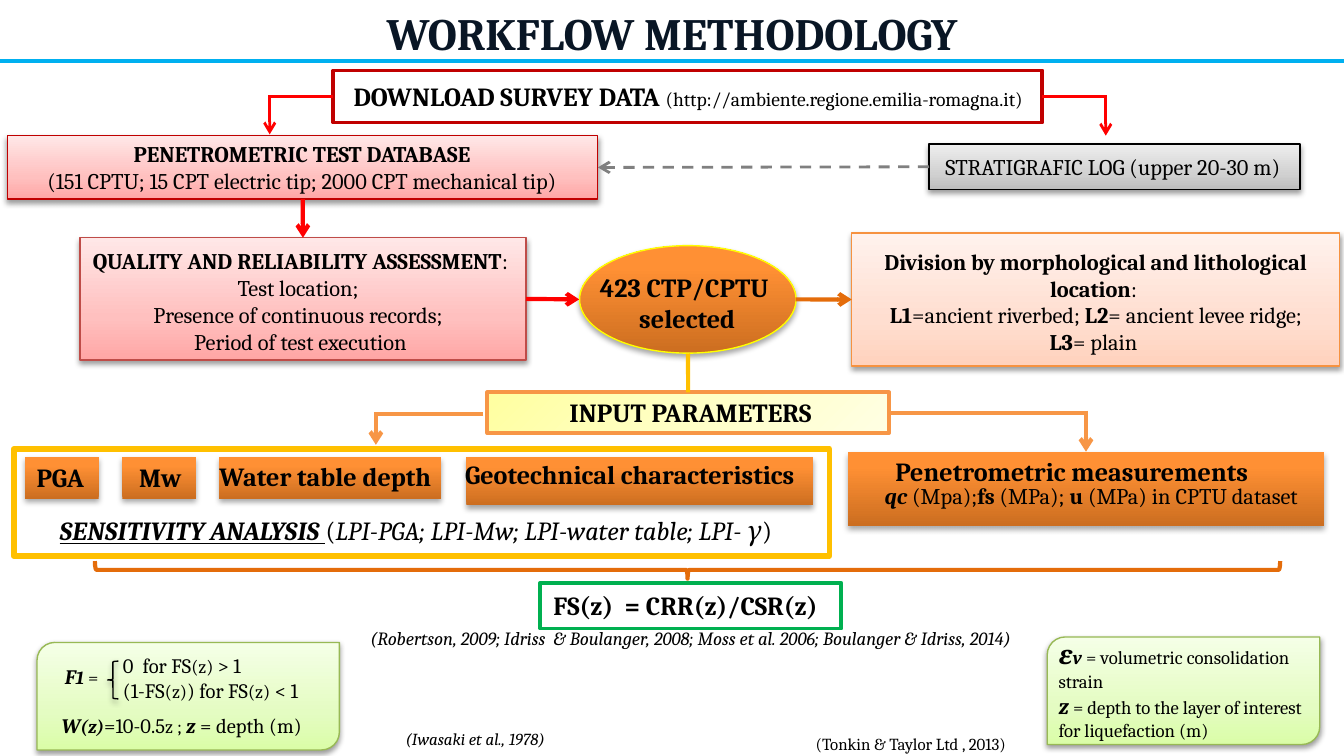
from copy import deepcopy
from dataclasses import dataclass

from lxml.etree import SubElement
from pptx import Presentation
from pptx.dml.color import RGBColor
from pptx.enum.dml import MSO_LINE
from pptx.enum.shapes import MSO_CONNECTOR, MSO_SHAPE
from pptx.enum.text import MSO_ANCHOR, MSO_AUTO_SIZE, PP_ALIGN
from pptx.oxml.ns import qn
from pptx.util import Pt

FONT = "Cambria"
TOP, LEFT, BOTTOM, RIGHT = range(4)
RED, AMBER, ORANGE, DARK_ORANGE = "FF0000", "FFC000", "F79646", "E46C0A"
GREEN_FADE = ((0, "DAFDA7"), (35, "E4FCC2"), (100, "F5FFE7"))
PINK_FADE = ((0, "FFA6A5"), (35, "FFC0BF"), (100, "FFE7E7"))
ORANGE_FADE = ((0, "CC6E20"), (80, "FF9034"), (100, "FF9136"))
PEACH_FADE = ((0, "FFD2BD"), (35, "FFDED0"), (100, "FFF2ED"))
GREY_FADE = ((0, "BDBDBD"), (35, "D1D1D1"), (100, "EEEEEE"))
YELLOW_FADE = ((0, "FFFFA0"), (50, "FFFFC5"), (100, "FFFFE3"))
SOFT, STRONG = (38, 1.6), (35, 1.8)


@dataclass
class Box:
    at: tuple
    fade: tuple = ()
    line: str = ""
    width: float = 0.75
    shadow: tuple = ()
    kind: MSO_SHAPE = MSO_SHAPE.RECTANGLE
    angle: int = 90
    rotation: int = 0


@dataclass
class Line:
    start: tuple
    end: tuple
    color: str
    width: float = 2.25
    arrow: bool = True
    begin: tuple = ()
    finish: tuple = ()
    dashed: bool = False


@dataclass
class Label:
    at: tuple
    size: float
    paras: list
    align: PP_ALIGN = PP_ALIGN.CENTER
    wrap: bool = True
    color: str = "000000"
    insets: tuple = (3.6, 3.6)


def rgb(value: str) -> RGBColor:
    return RGBColor.from_string(value)


def apply(target, values: dict) -> None:
    for key, value in values.items():
        setattr(target, key, value)


def draw_box(slide, box: Box):
    sp = slide.shapes.add_shape(box.kind, *map(Pt, box.at))
    sp.rotation = box.rotation
    if box.fade:
        sp.fill.gradient()
        sp.fill.gradient_angle = box.angle
        stops = sp._element.spPr.find(qn("a:gradFill")).find(qn("a:gsLst"))
        stops.append(deepcopy(stops[0]))
        for stop, (pos, color) in zip(sp.fill.gradient_stops, box.fade):
            stop.position = pos / 100
            stop.color.rgb = rgb(color)
    else:
        sp.fill.background()
    if box.line:
        sp.line.color.rgb = rgb(box.line)
        sp.line.width = Pt(box.width)
    else:
        sp.line.fill.background()
    sp.shadow.inherit = False
    if box.shadow:
        alpha, dist = box.shadow
        effects = sp._element.spPr.find(qn("a:effectLst"))
        outer = SubElement(effects, qn("a:outerShdw"), blurRad=str(Pt(3.1)), dist=str(Pt(dist)),
                           dir="5400000", rotWithShape="0")
        color = SubElement(outer, qn("a:srgbClr"), val="000000")
        SubElement(color, qn("a:alpha"), val=str(alpha * 1000))
    return sp


def draw_line(slide, line: Line, shapes: dict) -> None:
    c = slide.shapes.add_connector(MSO_CONNECTOR.STRAIGHT, *map(Pt, line.start + line.end))
    for join, target in ((c.begin_connect, line.begin), (c.end_connect, line.finish)):
        if target:
            join(shapes[target[0]], target[1])
    c.line.color.rgb = rgb(line.color)
    c.line.width = Pt(line.width)
    if line.dashed:
        c.line.dash_style = MSO_LINE.DASH
    if line.arrow:
        SubElement(c.line._get_or_add_ln(), qn("a:tailEnd"), type="arrow")
    SubElement(c._element.spPr, qn("a:effectLst"))


def write_label(sp, label: Label) -> None:
    apply(sp, dict(zip(("left", "top", "width", "height"), map(Pt, label.at))))
    tf = sp.text_frame
    above, below = map(Pt, label.insets)
    apply(tf, {"word_wrap": label.wrap, "auto_size": MSO_AUTO_SIZE.SHAPE_TO_FIT_TEXT,
               "vertical_anchor": MSO_ANCHOR.TOP, "margin_top": above, "margin_bottom": below})
    for i, runs in enumerate(label.paras):
        p = tf.add_paragraph() if i else tf.paragraphs[0]
        apply(p, {"alignment": label.align, "space_before": Pt(0)})
        for text, style, *size in runs:
            r = p.add_run()
            r.text = text
            apply(r.font, {"name": FONT, "size": Pt(size[0] if size else label.size),
                           "bold": "b" in style, "italic": "i" in style, "underline": "u" in style})
            r.font.color.rgb = rgb(label.color)


BOXES = {
    "symbols": Box((561, 341.3, 146, 57.6), GREEN_FADE, "98B955", shadow=SOFT,
                   kind=MSO_SHAPE.ROUND_2_DIAG_RECTANGLE),
    "weights": Box((19.8, 344.2, 162, 57.6), GREEN_FADE, "98B955", shadow=SOFT,
                   kind=MSO_SHAPE.ROUND_2_DIAG_RECTANGLE),
    "input": Box((261, 210.2, 215.3, 21.8), YELLOW_FADE, ORANGE, 2, angle=315),
    "division": Box((456.3, 124.8, 261.4, 71.3), PEACH_FADE, "F69240", shadow=SOFT),
    "selected": Box((310.5, 131.6, 116, 57.6), ORANGE_FADE, "FFFF00", shadow=STRONG,
                    kind=MSO_SHAPE.OVAL),
    "quality": Box((42.8, 127.4, 239, 65.5), PINK_FADE, "BF4C48", shadow=SOFT),
    "database": Box((4, 72.7, 316.3, 34), PINK_FADE, "C00000", shadow=SOFT),
    "log": Box((497.7, 77.2, 198.7, 24.3), GREY_FADE, "000000", shadow=SOFT),
    "download": Box((178.4, 37.8, 380, 27.8), (), "C00000", 2),
    "measurements": Box((454.3, 242, 255, 39.6), ORANGE_FADE, shadow=STRONG),
    **{name: Box((x, 244.8, w, h), ORANGE_FADE, shadow=STRONG)
       for name, x, w, h in (("pga", 13.3, 39.6, 22.3), ("mw", 65.5, 39.6, 22.3),
                             ("water", 117.4, 118.8, 22.3), ("geotechnical", 249.8, 185.8, 26))},
    "sensitivity": Box((7.4, 240.5, 437, 57.4), (), AMBER, 3),
    "join brace": Box((363.6, -12.2, 9.4, 635), (), DARK_ORANGE, 2.25,
                      kind=MSO_SHAPE.RIGHT_BRACE, rotation=90),
    "case brace": Box((57.6, 354.2, 5.8, 20.2), (), "000000", shadow=SOFT,
                      kind=MSO_SHAPE.LEFT_BRACE),
    "safety": Box((289.4, 312.3, 161.3, 24.5), (), "00B050", 2),
}

LINES = [
    Line((0, 32.9), (720, 32.9), "00B0F0", arrow=False),
    Line((178.4, 51.7), (144.5, 51.7), RED, 1.5, False, ("download", LEFT)),
    Line((144.5, 51), (144.5, 72), RED, 1.5),
    Line((558.4, 51.7), (592.4, 51.7), RED, 1.5, False, ("download", RIGHT)),
    Line((592.4, 51), (592.4, 72.7), RED, 1.5),
    Line((162, 107), (162, 127), RED, begin=("database", BOTTOM), finish=("quality", TOP)),
    Line((282, 160.2), (310.3, 160.4), RED, begin=("quality", RIGHT)),
    Line((426.3, 160.4), (456.3, 160.4), DARK_ORANGE, finish=("division", LEFT)),
    Line((368.6, 189.4), (368.6, 210), AMBER, arrow=False, finish=("input", TOP)),
    Line((259, 221.6), (201.4, 221.6), ORANGE, arrow=False),
    Line((201.4, 220.8), (201.4, 238.3), ORANGE),
    Line((476.3, 221.1), (581.8, 221.1), ORANGE, arrow=False, begin=("input", RIGHT)),
    Line((581.8, 220), (581.8, 242), ORANGE, finish=("measurements", TOP)),
    Line((497.7, 89.3), (320.3, 89.7), "808080", 1.5, begin=("log", LEFT),
         finish=("database", RIGHT), dashed=True),
]

TITLE = Label((0, 0, 720, 35.3), 24, [[("WORKFLOW METHODOLOGY", "b")]], color="091625",
              insets=(2.9, 3.6))

LABELS = [
    Label((5.4, 71.7, 313, 36), 12, [
        [("PENETROMETRIC TEST DATABASE", "b")],
        [("(151 CPTU; 15 CPT electric tip; 2000 CPT mechanical tip)", "")]]),
    Label((475.6, 78.5, 244, 21.6), 12, [[("STRATIGRAFIC LOG (upper 20-30 m) ", "")]]),
    Label((36.5, 129, 249, 65.5), 12, [
        [("QUALITY AND RELIABILITY ASSESSMENT", "b"), (":", "")], [("Test location; ", "")],
        [("Presence of continuous records; ", "")], [("Period of test execution", "")]]),
    Label((289, 141.8, 158.4, 41), 14, [[("423 CTP/CPTU ", "b")], [("selected", "b")]]),
    Label((290.8, 208.8, 158.4, 24.5), 14, [[("INPUT PARAMETERS", "b")]]),
    Label((454.4, 129.2, 265.4, 65.5), 12, [
        [("Division by morphological and lithological location", "b"), (": ", "")],
        [("L1", "b"), ("=ancient riverbed; ", ""), ("L2", "b"), ("= ancient levee ridge;", "")],
        [("L3", "b"), ("= plain ", "")]]),
    Label((167.8, 39.6, 401.8, 24.5), 14, [
        [("DOWNLOAD SURVEY DATA ", "b"), ("(http://ambiente.regione.emilia-romagna.it)", "", 10.5)]]),
    Label((470, 240.5, 211.7, 24.5), 14, [[("Penetrometric measurements ", "b")]]),
    Label((454.3, 255, 260.6, 21.6), 12, [
        [("qc", "bi"), (" (Mpa);", ""), ("fs", "b"), (" (MPa);", ""), (" u ", "b"),
         ("(MPa) in CPTU dataset", "")]]),
    Label((12.5, 243.4, 41, 24.5), 14, [[("PGA", "b")]], PP_ALIGN.LEFT, False),
    Label((67.4, 243.4, 37.4, 24.5), 14, [[("Mw", "b")]], PP_ALIGN.LEFT, False),
    Label((109.7, 243.2, 132.5, 24.5), 14, [[("Water table depth ", "b")]]),
    Label((236.3, 242, 202.3, 24.5), 14, [[("Geotechnical characteristics", "b")]]),
    Label((0, 272.2, 445.6, 24.5), 14, [
        [("SENSITIVITY ANALYSIS ", "biu"), ("(", ""),
         ("LPI-PGA; LPI-Mw; LPI-water table; LPI- γ", "i"), (")", "")]]),
    Label((146, 332.3, 447.8, 19.4), 10, [
        [("(Robertson, 2009; Idriss  & Boulanger, 2008; Moss et al. 2006; Boulanger & Idriss, 2014)",
          "i")]]),
    Label((207.4, 386.6, 94.3, 18), 9, [[("(Iwasaki et al., 1978)", "i")]], wrap=False),
    Label((424.8, 390.5, 126, 14), 9, [[("(Tonkin & Taylor Ltd , 2013)", "")]], wrap=False,
          insets=(2.6, 0)),
    Label((26, 378.2, 167, 21), 11, [
        [("W", "bi"), ("(z)", "bi", 10), ("=10-0.5", ""), ("z ; ", "", 10), ("z", "bi"),
         (" = depth (m)", "")]], PP_ALIGN.LEFT),
    Label((58.8, 346.3, 130.3, 33.8), 11, [
        [("0  for FS", ""), ("(z) ", "", 10), ("> 1", "")],
        [("(1-FS", ""), ("(z)", "", 10), (") for FS", ""), ("(z)", "", 10), (" < 1", "")]],
        PP_ALIGN.LEFT),
    Label((27.6, 352, 39.6, 21), 11, [[("F", "bi"), ("1", "bi", 10), (" =", "", 10)]],
          PP_ALIGN.LEFT),
    Label((560, 338.4, 156.2, 63.4), 10, [
        [("ε", "bi", 14), ("v ", "bi"), ("= volumetric consolidation strain", "")],
        [("z", "bi", 12), (" = depth to the layer of interest  for liquefaction (m)", "")]],
        PP_ALIGN.LEFT),
]

SAFETY = Label(BOXES["safety"].at, 14, [[("FS(z)  = CRR(z)/CSR(z)", "b")]], PP_ALIGN.LEFT, False)


def main() -> None:
    prs = Presentation()
    apply(prs, {"slide_width": Pt(720), "slide_height": Pt(405)})
    slide = prs.slides.add_slide(prs.slide_layouts[5])
    write_label(slide.shapes.title, TITLE)
    shapes = {name: draw_box(slide, box) for name, box in BOXES.items()}
    shapes["safety"].fill.solid()
    shapes["safety"].fill.fore_color.rgb = rgb("FFFFFF")
    write_label(shapes["safety"], SAFETY)
    for line in LINES:
        draw_line(slide, line, shapes)
    for label in LABELS:
        write_label(slide.shapes.add_textbox(*map(Pt, label.at)), label)
    prs.save("out.pptx")


if __name__ == "__main__":
    main()
